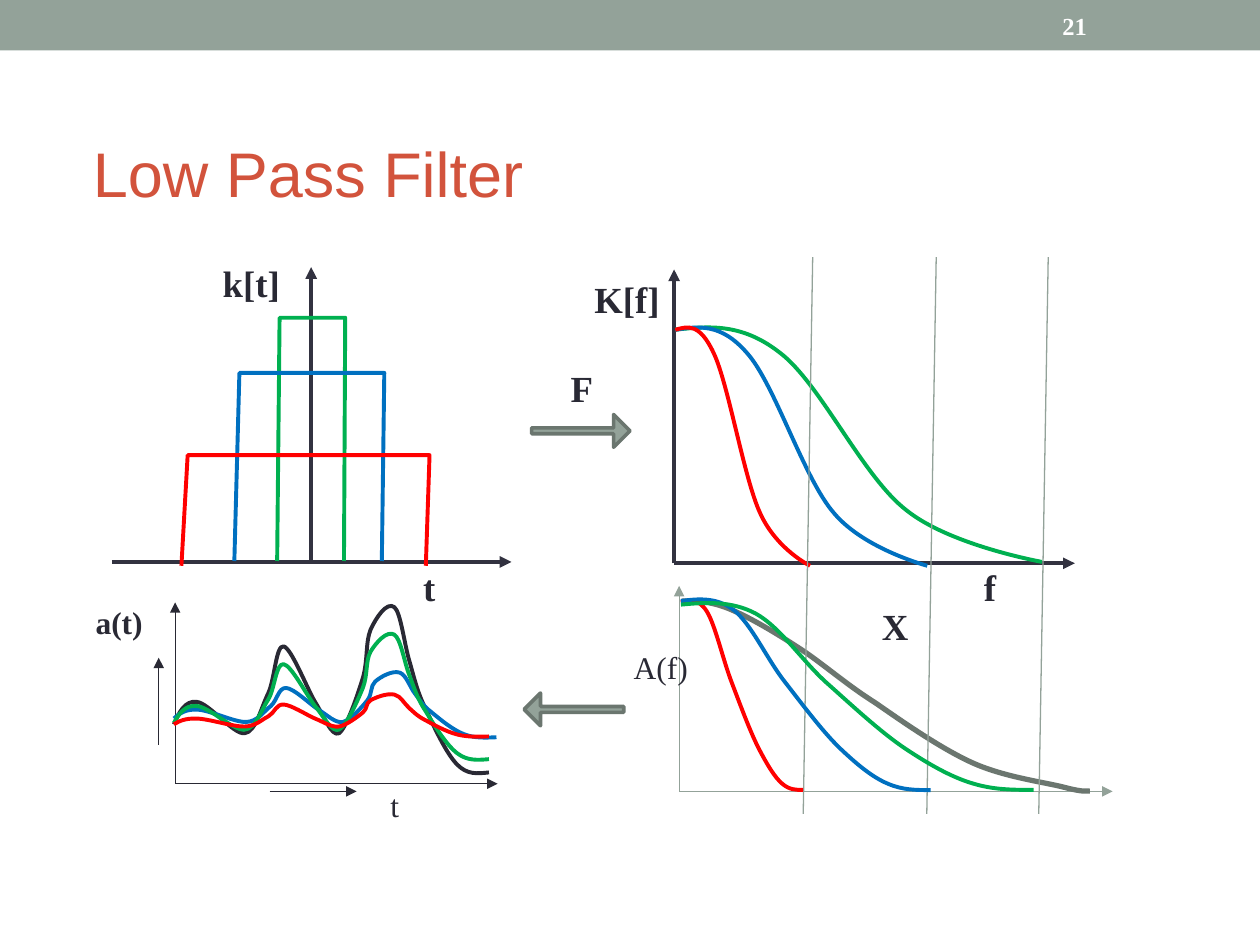
from lxml import etree
from pptx import Presentation
from pptx.dml.color import RGBColor
from pptx.enum.shapes import MSO_CONNECTOR, MSO_SHAPE
from pptx.enum.text import MSO_ANCHOR
from pptx.oxml.ns import qn
from pptx.util import Pt

STRAIGHT = MSO_CONNECTOR.STRAIGHT
RECTANGLE = MSO_SHAPE.RECTANGLE
RIGHT_ARROW = MSO_SHAPE.RIGHT_ARROW
TOP, MIDDLE = MSO_ANCHOR.TOP, MSO_ANCHOR.MIDDLE
SERIF, SANS = "Times New Roman", "Arial"

COLORS = {
    "sage": "93A299", "moss": "6B766F", "title": "D2533C", "white": "FFFFFF",
    "axis": "323240", "ink": "292934",
    "green": "00B050", "blue": "0070C0", "red": "FF0000",
}

# Bezier points in percent of the curve's box: start, then three per segment
RESPONSE = [(0, 3), (9, 1.6), (18, 0), (28.5, 12.6), (39.5, 25.3), (51, 64.2),
            (63, 78.4), (75, 93.2), (100, 100), ]
RESPONSE = RESPONSE + [(100, 100)] * (-(len(RESPONSE) - 1) % 3)
SPECTRUM = [(0, 0), (3.4, 0), (6.8, 0), (11.4, 3.9), (16, 7.9), (21.9, 15.1),
            (28.1, 23.7), (34, 31.6), (40.1, 43.4), (47.5, 53.3), (54.6, 63.8),
            (63.9, 77.6), (71.6, 84.9), (79.3, 92.1), (88.9, 94.7),
            (93.8, 97.4), (98.5, 100), (99.1, 99.3), (100, 99.3)]
FILTERED = [(0, 2), (7.1, 0.7), (14.4, 0), (21.1, 6.6), (28.2, 13.8),
            (34.5, 32.2), (41.7, 44), (48.9, 56), (56.8, 69.7), (63.7, 78.3),
            (70.6, 86.8), (76.8, 93.4), (82.9, 96.7), (88.8, 100),
            (94.2, 100), (100, 100)]
WAVE = [(0, 71), (1.6, 63.8), (3.6, 57.2), (7.2, 58), (11.2, 58.7),
        (18.8, 76.8), (22.4, 76.1), (26, 75.4), (27.6, 61.6), (30, 52.9),
        (32, 44.9), (32.4, 25.4), (34.8, 26.1), (37.2, 26.8), (42, 49.3),
        (44.8, 58), (47.6, 65.9), (50, 78.3), (52.4, 76.1), (54.8, 73.2),
        (58.4, 53.6), (60, 44.2), (61.6, 34.1), (60.8, 23.9), (62.4, 16.7),
        (64, 10.1), (67.6, 0), (70, 3.6), (72, 6.5), (73.2, 25.4),
        (74.8, 34.8), (76.4, 44.9), (77.2, 52.2), (80, 62.3), (82.4, 71.7),
        (86.4, 87.7), (90, 94.2), (93.2, 100), (96.4, 99.3), (100, 98.6)]


def color(name):
    return RGBColor.from_string(COLORS[name])


def add_text(slide, text, left, top, width, height=32, size=21, font=SERIF,
             fill="ink", bold=True, anchor=TOP):
    frame = slide.shapes.add_textbox(
        Pt(left), Pt(top), Pt(width), Pt(height)).text_frame
    frame.word_wrap = True
    frame.vertical_anchor = anchor
    run = frame.paragraphs[0].add_run()
    run.text = text
    run.font.name, run.font.size, run.font.bold = font, Pt(size), bold
    run.font.color.rgb = color(fill)


def add_line(slide, x1, y1, x2, y2, line="ink", weight=0.75, arrow=True):
    connector = slide.shapes.add_connector(
        STRAIGHT, Pt(x1), Pt(y1), Pt(x2), Pt(y2))
    connector.line.color.rgb = color(line)
    connector.line.width = Pt(weight)
    if arrow:
        etree.SubElement(connector.line._get_or_add_ln(), qn("a:tailEnd"),
                         type="triangle")
    etree.SubElement(connector._element.spPr, qn("a:effectLst"))


def add_outline(slide, points, line, weight=2.25):
    points = [(Pt(x), Pt(y)) for x, y in points]
    builder = slide.shapes.build_freeform(*points[0])
    builder.add_line_segments(points[1:], close=False)
    shape = builder.convert_to_shape()
    shape.shadow.inherit = False
    shape.fill.background()
    shape.line.color.rgb = color(line)
    shape.line.width = Pt(weight)
    return shape


def add_curve(slide, curve, box, line, weight=2.25):
    left, top, width, height = box
    shape = add_outline(slide, [(left + x * width / 100, top + y * height / 100)
                                for x, y in curve], line, weight)
    # Turn each three line points into one cubic segment
    steps = shape._element.xpath(".//a:lnTo")
    for first in range(0, len(steps), 3):
        segment = etree.Element(qn("a:cubicBezTo"))
        steps[first].addprevious(segment)
        for step in steps[first:first + 3]:
            segment.append(step[0])
            step.getparent().remove(step)


def add_block(slide, kind, left, top, width, height):
    shape = slide.shapes.add_shape(
        kind, Pt(left), Pt(top), Pt(width), Pt(height))
    shape.shadow.inherit = False
    shape.fill.solid()
    shape.fill.fore_color.rgb = color("sage")
    shape.line.fill.background()
    return shape


def draw_block_arrow(slide, left, top, width, height, rotation=0):
    arrow = add_block(slide, RIGHT_ARROW, left, top, width, height)
    arrow.adjustments[0] = 0.18
    arrow.line.color.rgb = color("moss")
    arrow.line.width = Pt(2.08)
    arrow.rotation = rotation


def draw_axes(slide, left, top, width, height, origin=0, **style):
    bottom = top + height
    add_line(slide, left + origin, bottom, left + origin, top, **style)
    add_line(slide, left, bottom, left + width, bottom, **style)


def draw_header(slide, left, top, width, height):
    add_block(slide, RECTANGLE, left, top, width, height)
    add_text(slide, "21", left + 600, top + 1.5, 84, 26, size=14,
             fill="white", anchor=MIDDLE)
    add_text(slide, "Low Pass Filter", left + 46, top + 71, 595, 55, size=36,
             font=SANS, fill="title", bold=False, anchor=MIDDLE)


def draw_kernels(slide, left, top, width, height):
    draw_axes(slide, left, top, width, height, origin=113.8,
              line="axis", weight=2.25)
    add_text(slide, "t", left + 170.7, top + 166.4, 23)
    add_text(slide, "k[t]", left + 56.2, top - 7.2, 49)
    # Box kernels: x of the four corners, then top and foot
    for line, corners, peak, foot in (
            ("green", (94.4, 95.8, 133.3, 132.6), 29, 168),
            ("blue", (69.9, 72.8, 155.6, 154.2), 60.5, 168),
            ("red", (39.7, 43.3, 181.5, 179.4), 107.5, 170.7)):
        heights = (foot, peak, peak, foot)
        add_outline(slide, [(left + x, top + y)
                            for x, y in zip(corners, heights)], line)


def draw_responses(slide, left, top, width, height):
    draw_axes(slide, left, top, width, height, line="axis", weight=2.25)
    add_text(slide, "f", left + 169.9, top + 165, 23)
    add_text(slide, "K[f]", left - 52.6, top + 0.8, 54)
    for line, reach, drop in (("green", 209.5, 136.8), ("blue", 144, 139),
                              ("red", 77, 139)):
        add_curve(slide, RESPONSE, (left + 0.7, top + 30.3, reach, drop), line)


def draw_spectrum(slide, left, top, width, height):
    draw_axes(slide, left, top, width, height, line="sage")
    add_text(slide, "A(f)", left - 33.1, top + 31.7, 63, 29, size=18,
             bold=False)
    add_curve(slide, SPECTRUM, (left + 1.4, top + 8.6, 233.3, 109.4),
              "moss", 3)
    add_text(slide, "X", left + 108.7, top + 6.5, 41)
    # Cut-off guides, shared with the responses above
    for x in (76.3, 146.9, 210.9):
        add_line(slide, left + x, top - 187.9, left + x - 5.4, top + 130.3,
                 line="sage", arrow=False)
    for line, offset, reach, drop in (("red", 7.2, 69.8, 109.4),
                                      ("blue", 6.5, 142.6, 110.2),
                                      ("green", 8.6, 201.6, 108)):
        add_curve(slide, FILTERED, (left + 1, top + offset, reach, drop), line)


def draw_signals(slide, left, top, width, height):
    draw_axes(slide, left, top, width, height)
    # Direction arrows beside the axes
    add_line(slide, left + 54, top + 108, left + 103.7, top + 108)
    add_line(slide, left - 9.4, top + 81.3, left - 9.4, top + 31.6)
    add_text(slide, "t", left + 115.9, top + 101.5, 21, 29, size=18,
             bold=False)
    add_text(slide, "a(t)", left - 52.6, top - 2.9, 43, 29, size=18)
    for line, offset, reach, swing in (("ink", -0.8, 180, 99.4),
                                       ("blue", 38.8, 184.3, 38.9),
                                       ("green", 15.8, 180, 74.9),
                                       ("red", 51.8, 180, 25.2)):
        add_curve(slide, WAVE, (left - 0.7, top + offset, reach, swing), line)


def main():
    presentation = Presentation()
    presentation.slide_width, presentation.slide_height = Pt(720), Pt(540)
    slide = presentation.slides.add_slide(presentation.slide_layouts[6])
    draw_header(slide, 0, 0, 720, 28.8)
    draw_kernels(slide, 64, 152.6, 228.3, 168.5)
    draw_block_arrow(slide, 303.8, 236.9, 56.2, 18.7)
    add_text(slide, "F", 319, 205.2, 29)
    draw_responses(slide, 385.2, 154, 229, 167.9)
    draw_spectrum(slide, 388.1, 334.8, 247.7, 117.4)
    draw_signals(slide, 100.1, 344.2, 184.3, 103.7)
    draw_block_arrow(slide, 299.5, 396, 56.9, 18.7, rotation=180)
    presentation.save("out.pptx")


if __name__ == "__main__":
    main()
